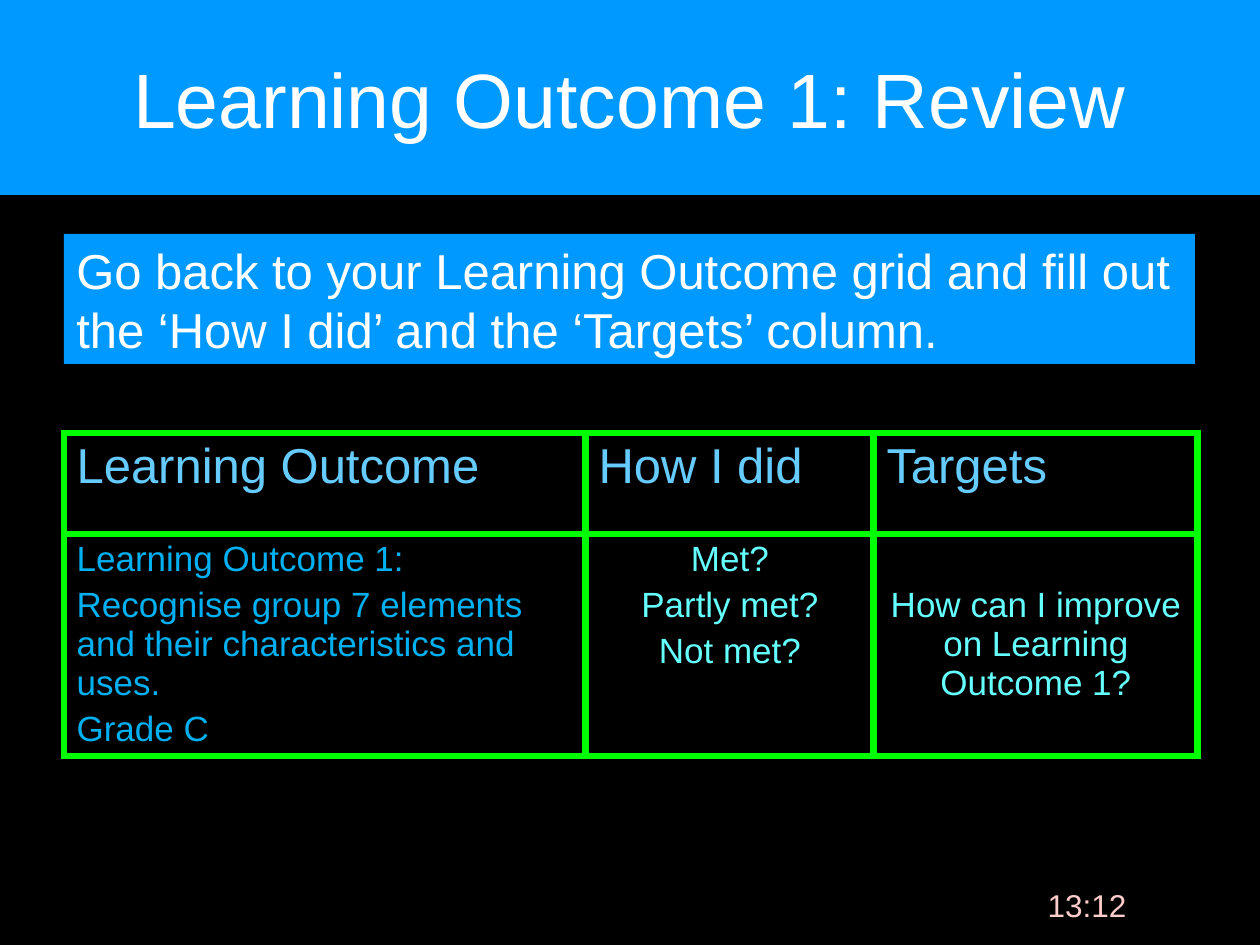
from dataclasses import dataclass

from lxml import etree
from pptx import Presentation
from pptx.dml.color import RGBColor
from pptx.enum.shapes import MSO_SHAPE
from pptx.enum.text import MSO_ANCHOR, PP_ALIGN
from pptx.oxml.ns import qn
from pptx.util import Emu, Pt

LEFT, CENTER = PP_ALIGN.LEFT, PP_ALIGN.CENTER
TOP, MIDDLE = MSO_ANCHOR.TOP, MSO_ANCHOR.MIDDLE
RECTANGLE = MSO_SHAPE.RECTANGLE

EMU_PER_PX = 914400 / 126
TITLE_ONLY = 5
FONT = "Arial"
COLOURS = {
    "background": "000000",
    "panel": "0099FF",
    "white": "FFFFFF",
    "clock": "FFCCCC",
    "border": "00FF00",
    "heading": "66CCFF",
    "outcome": "00B0F0",
    "prompt": "66FFFF",
}
BORDER_WIDTH = Pt(4.5)
COLUMN_WIDTHS = (522, 288, 324)
ROW_HEIGHTS = (101, 222)


@dataclass(frozen=True)
class TextStyle:
    size: float
    colour: str
    alignment: PP_ALIGN = LEFT


@dataclass(frozen=True)
class CellContent:
    paragraphs: tuple[str, ...]
    style: TextStyle
    margin_top: int = 6


HEADING = TextStyle(28, "heading")
OUTCOME = TextStyle(20, "outcome")
PROMPT = TextStyle(20, "prompt", CENTER)

TABLE_ROWS = (
    tuple(CellContent((heading,), HEADING)
          for heading in ("Learning Outcome", "How I did", "Targets")),
    (
        CellContent((
            "Learning Outcome 1:",
            "Recognise group 7 elements and their characteristics and uses.",
            "Grade C",
        ), OUTCOME),
        CellContent(("Met?", "Partly met?", "Not met?"), PROMPT),
        CellContent(("How can I improve on Learning Outcome 1?",), PROMPT, margin_top=52),
    ),
)


def px(length: int) -> Emu:
    return Emu(round(length * EMU_PER_PX))


def rgb(name: str) -> RGBColor:
    return RGBColor.from_string(COLOURS[name])


def fill_solid(item, colour: str) -> None:
    item.fill.solid()
    item.fill.fore_color.rgb = rgb(colour)


def place(shape, left: int, top: int, width: int, height: int) -> None:
    bounds = {"left": left, "top": top, "width": width, "height": height}
    for name, value in bounds.items():
        setattr(shape, name, px(value))


def write_text(text_frame, paragraphs: tuple[str, ...], style: TextStyle,
               anchor: MSO_ANCHOR = TOP) -> None:
    """Write one paragraph per string, spaced by a fifth of the text size."""
    text_frame.word_wrap = True
    text_frame.vertical_anchor = anchor
    for index, text in enumerate(paragraphs):
        paragraph = text_frame.paragraphs[0] if index == 0 else text_frame.add_paragraph()
        paragraph.alignment = style.alignment
        paragraph.space_before = Pt(style.size / 5 if index else 0)
        run = paragraph.add_run()
        run.text = text
        for name, value in {"name": FONT, "size": Pt(style.size)}.items():
            setattr(run.font, name, value)
        run.font.color.rgb = rgb(style.colour)


def add_borders(cell) -> None:
    properties = cell._tc.get_or_add_tcPr()
    for index, side in enumerate(("a:lnL", "a:lnR", "a:lnT", "a:lnB")):
        line = etree.Element(qn(side), w=str(BORDER_WIDTH))
        solid = etree.SubElement(line, qn("a:solidFill"))
        etree.SubElement(solid, qn("a:srgbClr"), val=COLOURS["border"])
        properties.insert(index, line)


def add_title(slide) -> None:
    title = slide.shapes.title
    place(title, 0, 0, 1260, 195)
    fill_solid(title, "panel")
    write_text(title.text_frame, ("Learning Outcome 1: Review",),
               TextStyle(44, "white", CENTER), MIDDLE)


def add_instruction(slide) -> None:
    panel = slide.shapes.add_shape(RECTANGLE, px(64), px(234), px(1131), px(130))
    panel.shadow.inherit = False
    panel.line.fill.background()
    fill_solid(panel, "panel")
    instruction = ("Go back to your Learning Outcome grid and fill out "
                   "the ‘How I did’ and the ‘Targets’ column.")
    write_text(panel.text_frame, (instruction,), TextStyle(28, "white"), MIDDLE)


def add_review_table(slide) -> None:
    frame = slide.shapes.add_table(
        len(ROW_HEIGHTS), len(COLUMN_WIDTHS), px(64), px(433),
        px(sum(COLUMN_WIDTHS)), px(sum(ROW_HEIGHTS)))
    table = frame.table
    for column, width in zip(table.columns, COLUMN_WIDTHS):
        column.width = px(width)
    for row, height, contents in zip(table.rows, ROW_HEIGHTS, TABLE_ROWS):
        row.height = px(height)
        for cell, content in zip(row.cells, contents):
            fill_solid(cell, "background")
            add_borders(cell)
            cell.margin_top = px(content.margin_top)
            write_text(cell.text_frame, content.paragraphs, content.style)
            cell.vertical_anchor = TOP


def add_clock(slide) -> None:
    clock = slide.shapes.add_textbox(px(988), px(880), px(198), px(65))
    write_text(clock.text_frame, ("13:12",), TextStyle(18, "clock", CENTER))


def main() -> None:
    presentation = Presentation()
    presentation.slide_width, presentation.slide_height = px(1260), px(945)
    slide = presentation.slides.add_slide(presentation.slide_layouts[TITLE_ONLY])
    fill_solid(slide.background, "background")
    add_title(slide)
    add_instruction(slide)
    add_review_table(slide)
    add_clock(slide)
    presentation.save("out.pptx")


if __name__ == "__main__":
    main()
